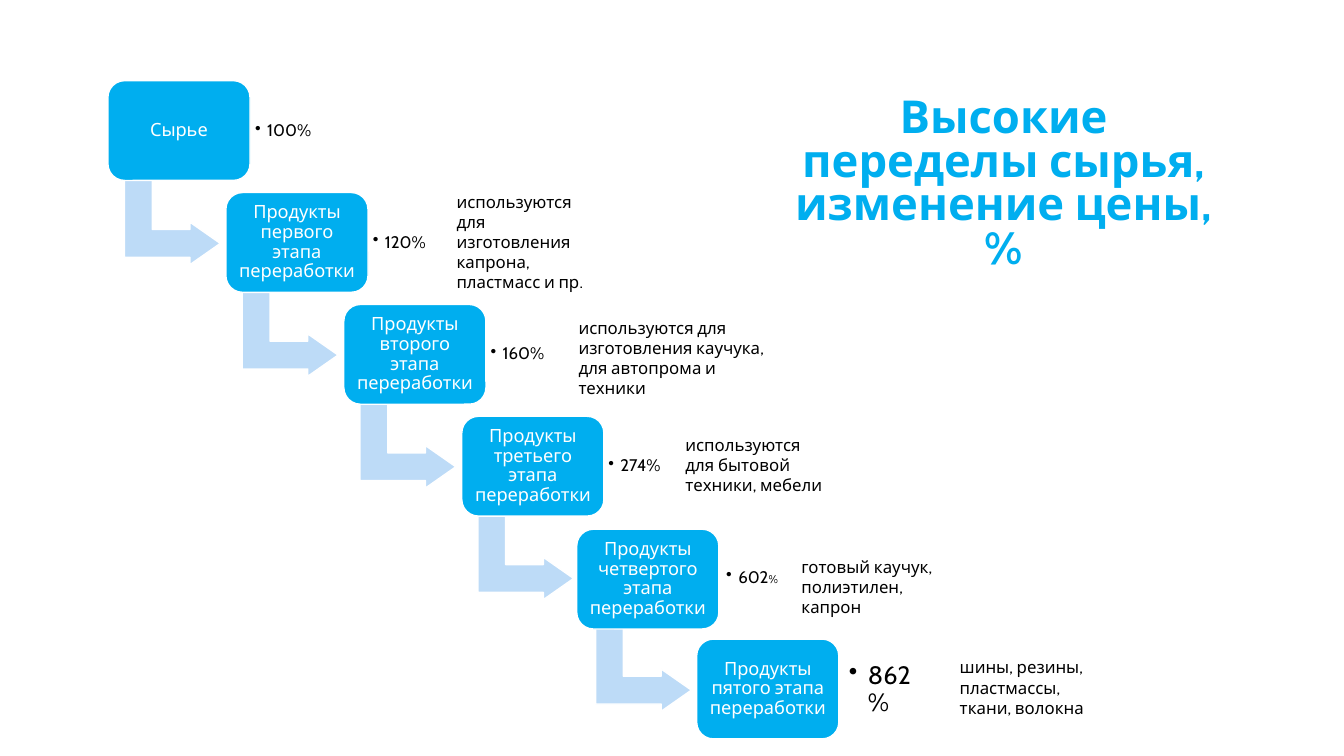
from lxml.etree import SubElement
from pptx import Presentation
from pptx.dml.color import RGBColor
from pptx.enum.shapes import MSO_SHAPE
from pptx.enum.text import MSO_ANCHOR, MSO_AUTO_SIZE, PP_ALIGN
from pptx.oxml.ns import qn
from pptx.util import Inches, Pt

STEP_X, STEP_Y = 1.168, 1.108
BLUE, PALE_BLUE, WHITE, BLACK = "00AEEF", "BDDBF7", "FFFFFF", "000000"


def style_text(para, size, color, spacing=1.0, align=PP_ALIGN.LEFT):
    para.alignment = align
    para.line_spacing = spacing
    para.font.name = "Cabin"
    para.font.size = Pt(size)
    para.font.color.rgb = RGBColor.from_string(color)


def add_block(kind, left, top, width, height, fill):
    block = page.shapes.add_shape(
        kind, Inches(left), Inches(top), Inches(width), Inches(height))
    block.shadow.inherit = False
    block.fill.solid()
    block.fill.fore_color.rgb = RGBColor.from_string(fill)
    block.line.color.rgb = RGBColor.from_string(WHITE)
    block.line.width = Pt(1)
    return block


deck = Presentation()
deck.slide_width, deck.slide_height = Inches(13.33), Inches(7.5)
page = deck.slides.add_slide(deck.slide_layouts[5])

title = page.shapes.title
title.left, title.top = Inches(7.76), Inches(1.26)
title.width, title.height = Inches(4.39), Inches(1.5)
frame = title.text_frame
frame.text = "Высокие переделы сырья, изменение цены, %"
frame.word_wrap = True
frame.auto_size = MSO_AUTO_SIZE.NONE
frame.vertical_anchor = MSO_ANCHOR.BOTTOM
style_text(frame.paragraphs[0], 32.4, BLUE, 0.8, PP_ALIGN.CENTER)
frame.paragraphs[0].font.bold = True

stages = [
    ("Сырье", 1.07, 0.8, ["100%"], 12, 0.05, 0.12),
    ("Продукты первого этапа переработки", 2.24, 1.91, ["120%"], 12, 0.05, 0.12),
    ("Продукты второго этапа переработки", 3.41, 3.02, ["160%"], 12, 0.05, 0.12),
    ("Продукты третьего этапа переработки", 4.58, 4.13, ["274%"], 12, 0.05, 0.12),
    ("Продукты четвертого этапа переработки", 5.72, 5.25, ["602", "%"], 12, 0.05, 0.12),
    ("Продукты пятого этапа переработки", 6.91, 6.34, ["862%"], 18, 0.1, 0.19),
]

for index, (name, left, top, price, size, inset, indent) in enumerate(stages):
    shift_x, shift_y = index * STEP_X, index * STEP_Y
    if index < len(stages) - 1:
        arrow = add_block(MSO_SHAPE.BENT_UP_ARROW,
                          1.29 + shift_x, 1.73 + shift_y, 0.84, 0.95, PALE_BLUE)
        arrow.rotation = 90
        for position, value in enumerate((0.328, 0.25, 0.358)):
            arrow.adjustments[position] = value

    stage = add_block(MSO_SHAPE.ROUNDED_RECTANGLE, left, top, 1.41, 0.99, BLUE)
    stage.adjustments[0] = 0.167
    label = page.shapes.add_textbox(Inches(2.48 + shift_x), Inches(0.9 + shift_y),
                                    Inches(1.02), Inches(0.8))
    for box, margin in ((stage, 0.05), (label, inset)):
        frame = box.text_frame
        frame.word_wrap = True
        frame.vertical_anchor = MSO_ANCHOR.MIDDLE
        frame.margin_left = frame.margin_right = Inches(margin)
        frame.margin_top = frame.margin_bottom = Inches(margin)

    stage.text_frame.text = name
    style_text(stage.text_frame.paragraphs[0], 13, WHITE, 0.9, PP_ALIGN.CENTER)

    para = label.text_frame.paragraphs[0]
    para.level = 1
    for part in price:
        span = para.add_run()
        span.text = part
        if part == "%":
            span.font.size = Pt(8)
    properties = para._p.get_or_add_pPr()
    properties.set("marL", str(Inches(indent)))
    properties.set("indent", str(-Inches(indent)))
    SubElement(properties, qn("a:buChar")).set("char", "•")
    style_text(para, size, BLACK, 0.9)

notes = [
    ("используются для изготовления капрона, пластмасс и пр.", 4.43, 1.85, 1.65, 0.91),
    ("используются для изготовления каучука, для автопрома и техники", 5.64, 3.1, 2.13, 0.71),
    ("используются для бытовой техники, мебели", 6.7, 4.26, 1.65, 0.71),
    ("готовый каучук, полиэтилен, капрон", 7.85, 5.47, 1.65, 0.5),
    ("шины, резины, пластмассы, ткани, волокна", 9.42, 6.47, 1.65, 0.71),
]

for text, left, top, width, height in notes:
    note = page.shapes.add_textbox(
        Inches(left), Inches(top), Inches(width), Inches(height))
    note.text_frame.word_wrap = True
    note.text_frame.auto_size = MSO_AUTO_SIZE.SHAPE_TO_FIT_TEXT
    note.text_frame.text = text
    style_text(note.text_frame.paragraphs[0], 12, BLACK)

deck.save("out.pptx")
